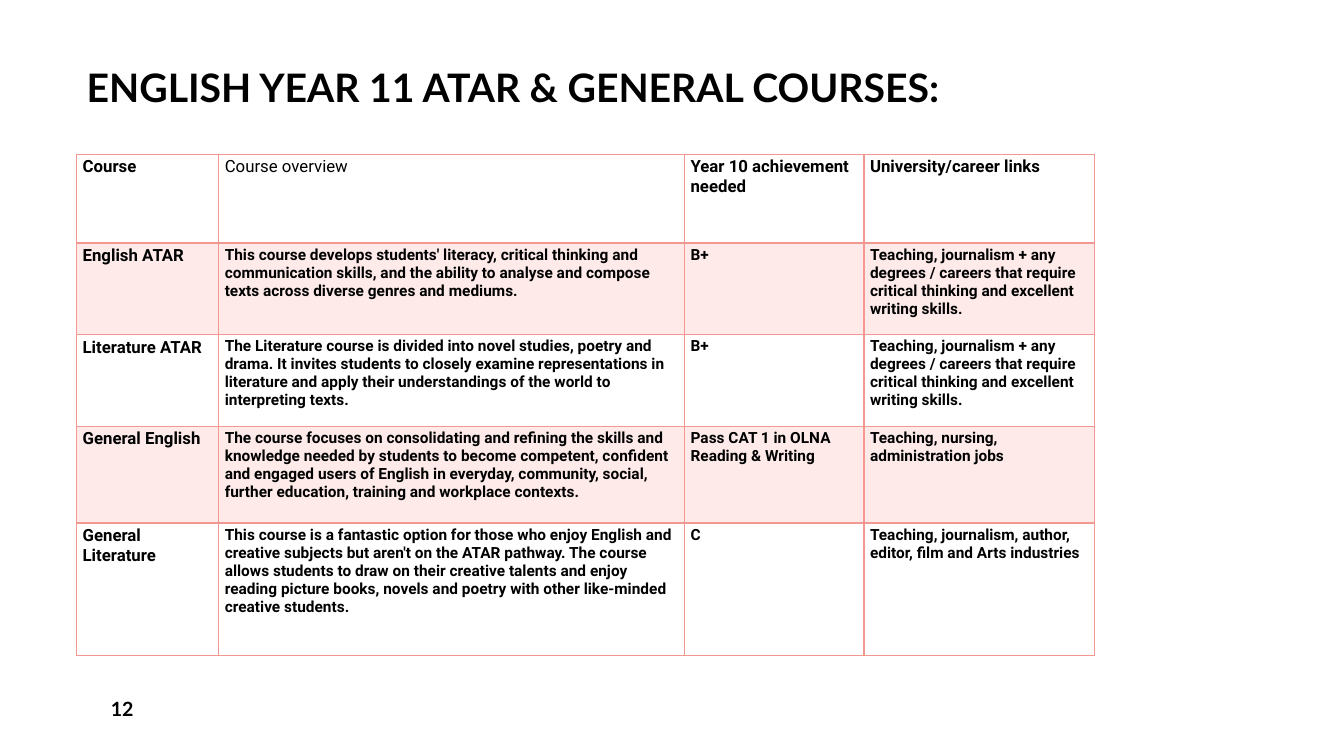
from lxml.etree import SubElement
from pptx import Presentation
from pptx.dml.color import RGBColor
from pptx.enum.text import MSO_ANCHOR
from pptx.oxml.ns import qn
from pptx.util import Inches, Pt

TITLE = "ENGLISH YEAR 11 ATAR & GENERAL COURSES:"
NUMBER = "12"
HEAD = ["Course", "Course overview", "Year 10 achievement needed",
        "University/career links"]
COURSES = [
    ("English ATAR",
     "This course develops students' literacy, critical thinking and "
     "communication skills, and the ability to analyse and compose texts "
     "across diverse genres and mediums.",
     "B+",
     "Teaching, journalism + any degrees / careers that require critical "
     "thinking and excellent writing skills."),
    ("Literature ATAR",
     "The Literature course is divided into novel studies, poetry and drama. "
     "It invites students to closely examine representations in literature "
     "and apply their understandings of the world to interpreting texts.",
     "B+",
     "Teaching, journalism + any degrees / careers that require critical "
     "thinking and excellent writing skills."),
    ("General English",
     "The course focuses on consolidating and refining the skills and "
     "knowledge needed by students to become competent, confident and engaged "
     "users of English in everyday, community, social, further education, "
     "training and workplace contexts.",
     "Pass CAT 1 in OLNA Reading & Writing",
     "Teaching, nursing, administration jobs"),
    ("General Literature",
     "This course is a fantastic option for those who enjoy English and "
     "creative subjects but aren't on the ATAR pathway. The course allows "
     "students to draw on their creative talents and enjoy reading picture "
     "books, novels and poetry with other like-minded creative students.",
     "C",
     "Teaching, journalism, author, editor, film and Arts industries"),
]
COLS = [1.41, 4.62, 1.78, 2.29]
ROWS = [0.88, 0.91, 0.91, 0.96, 1.31]
LEFT, TOP = 0.76, 1.53
BLACK, CORAL, BLUSH, WHITE = "000000", "F39891", "FDEAE9", "FFFFFF"


def color(code):
    return RGBColor.from_string(code)


def write(frame, text, size, face="Roboto", bold=True, anchor=MSO_ANCHOR.TOP,
          lead=1.0, after=0):
    frame.word_wrap = True
    frame.vertical_anchor = anchor
    para = frame.paragraphs[0]
    para.line_spacing = lead
    para.space_after = Pt(after)
    run = para.add_run()
    run.text = text
    font = run.font
    font.name, font.size, font.bold = face, Pt(size), bold
    font.color.rgb = color(BLACK)


def edge(cell, side, width):
    """Draw one border of a cell; call before the cell is filled."""
    line = SubElement(cell._tc.get_or_add_tcPr(), qn("a:ln" + side),
                      w=str(Pt(width)))
    fill = SubElement(line, qn("a:solidFill"))
    SubElement(fill, qn("a:srgbClr"), val=CORAL)


def add_courses(slide):
    grid = [HEAD, *COURSES]
    table = slide.shapes.add_table(
        len(ROWS), len(COLS), Inches(LEFT), Inches(TOP),
        Inches(sum(COLS)), Inches(sum(ROWS))).table
    for col, width in zip(table.columns, COLS):
        col.width = Inches(width)
    for row, height in zip(table.rows, ROWS):
        row.height = Inches(height)
    for r, texts in enumerate(grid):
        for c, text in enumerate(texts):
            cell = table.cell(r, c)
            cell.margin_left = cell.margin_right = Inches(0.06)
            cell.margin_top = cell.margin_bottom = Inches(0.03)
            write(cell.text_frame, text, 12 if r == 0 or c == 0 else 11,
                  bold=(r, c) != (0, 1))
            for side in "LRTB":
                heavy = (r, side) in ((0, "B"), (1, "T"))
                edge(cell, side, 2 if heavy else 1)
            cell.fill.solid()
            cell.fill.fore_color.rgb = color(BLUSH if r % 2 else WHITE)


def main():
    deck = Presentation()
    deck.slide_width, deck.slide_height = Inches(13.33), Inches(7.5)
    slide = deck.slides.add_slide(deck.slide_layouts[5])

    title = slide.shapes.title
    title.left, title.top = Inches(LEFT), Inches(0)
    title.width, title.height = Inches(11.38), Inches(1.15)
    write(title.text_frame, TITLE, 28, face="Lato",
          anchor=MSO_ANCHOR.BOTTOM, lead=0.9)
    title.text_frame.paragraphs[0].alignment = 1

    add_courses(slide)

    box = slide.shapes.add_textbox(Inches(1), Inches(6.83),
                                   Inches(2.92), Inches(0.4))
    write(box.text_frame, NUMBER, 14, face="Lato",
          anchor=MSO_ANCHOR.MIDDLE, after=6)
    deck.save("out.pptx")


if __name__ == "__main__":
    main()
